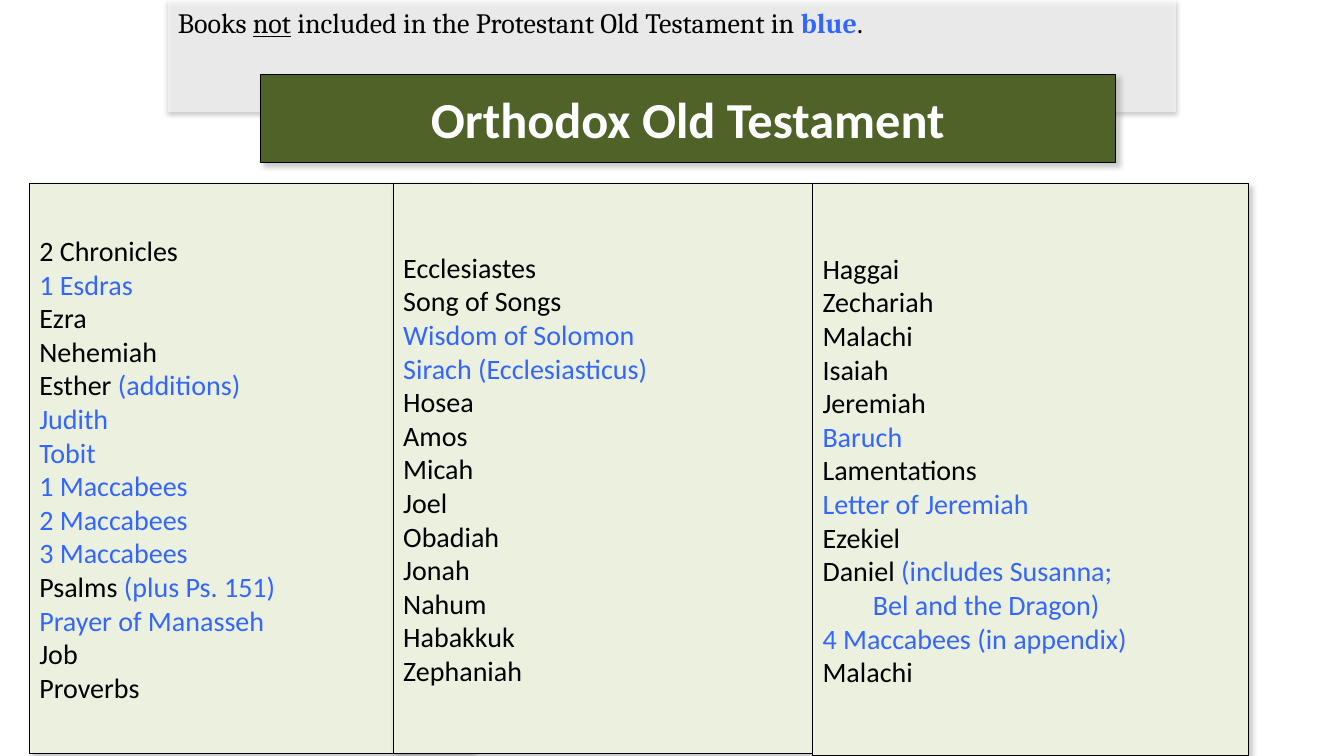
from dataclasses import dataclass

from lxml.etree import SubElement
from pptx import Presentation
from pptx.dml.color import RGBColor
from pptx.enum.shapes import MSO_SHAPE
from pptx.enum.text import MSO_ANCHOR, MSO_AUTO_SIZE, PP_ALIGN
from pptx.oxml.ns import qn
from pptx.util import Inches, Pt


@dataclass(frozen=True)
class Theme:
    ink: str = "000000"
    blue: str = "3366FF"
    white: str = "FFFFFF"
    olive: str = "4F6228"
    pale: str = "EBF1DE"
    heading_font: str = "Calibri"
    note_font: str = "Cambria"
    heading_size: int = 36
    text_size: int = 20
    border: float = 0.75
    tab: float = 0.5
    columns: int = 40
    rows: int = 30
    box_shadow: tuple = ("808080", 43, 4, 3, 45)
    band_shadow: tuple = ("000000", 35, 3.1, 1.8, 90)
    band_opacity: int = 59


class BookSlide:
    def __init__(self, deck, theme):
        self.theme = theme
        self.slide = deck.slides.add_slide(deck.slide_layouts[4])
        self.column = deck.slide_width / theme.columns
        self.row = deck.slide_height / theme.rows

    def box(self, x, y, width, height):
        return (round(x * self.column), round(y * self.row),
                round(width * self.column), round(height * self.row))

    def place(self, part, area):
        for side, length in zip(("left", "top", "width", "height"), self.box(*area)):
            setattr(part, side, length)

    def shade(self, part, shadow):
        color, opacity, blur, distance, angle = shadow
        part.shadow.inherit = False
        effects = part._element.spPr.find(qn("a:effectLst"))
        outer = SubElement(effects, qn("a:outerShdw"), blurRad=str(Pt(blur)),
                           dist=str(Pt(distance)), dir=str(angle * 60000),
                           algn="ctr", rotWithShape="0")
        tint = SubElement(outer, qn("a:srgbClr"), val=color)
        SubElement(tint, qn("a:alpha"), val=str(opacity * 1000))

    def paint(self, part, color):
        part.fill.solid()
        part.fill.fore_color.rgb = RGBColor.from_string(color)
        part.line.color.rgb = RGBColor.from_string(self.theme.ink)
        part.line.width = Pt(self.theme.border)
        self.shade(part, self.theme.box_shadow)

    def frame(self, part, **formats):
        for key, value in formats.items():
            setattr(part.text_frame, key, value)

    def add_words(self, paragraph, text, color, **formats):
        for number, line in enumerate(text.split("\n")):
            if number:
                paragraph.add_line_break()
            run = paragraph.add_run()
            run.text = line
            run.font.color.rgb = RGBColor.from_string(color)
            for key, value in formats.items():
                setattr(run.font, key, value)

    def band(self, area):
        band = self.slide.shapes.add_shape(MSO_SHAPE.RECTANGLE, *self.box(*area))
        band.fill.solid()
        band.fill.fore_color.rgb = RGBColor.from_string(self.theme.white)
        tint = band._element.spPr.find(qn("a:solidFill"))[0]
        SubElement(tint, qn("a:alpha"), val=str(self.theme.band_opacity * 1000))
        band.line.fill.background()
        self.shade(band, self.theme.band_shadow)
        self.slide.shapes._spTree.insert(2, band._element)

    def title(self, text, area):
        title = self.slide.shapes.title
        self.place(title, area)
        self.paint(title, self.theme.olive)
        self.frame(title, word_wrap=True, auto_size=MSO_AUTO_SIZE.NONE,
                   vertical_anchor=MSO_ANCHOR.MIDDLE)
        heading = title.text_frame.paragraphs[0]
        heading.alignment = PP_ALIGN.CENTER
        self.add_words(heading, text, self.theme.white, bold=True,
                       name=self.theme.heading_font, size=Pt(self.theme.heading_size))

    def note(self, pieces, area):
        note = self.slide.shapes.add_textbox(*self.box(*area))
        self.frame(note, word_wrap=True, auto_size=MSO_AUTO_SIZE.SHAPE_TO_FIT_TEXT)
        for text, color, formats in pieces:
            self.add_words(note.text_frame.paragraphs[0], text, color,
                           name=self.theme.note_font, size=Pt(self.theme.text_size), **formats)

    def books(self, index, titles, area):
        panel = self.slide.placeholders[index]
        self.place(panel, area)
        self.paint(panel, self.theme.pale)
        self.frame(panel, word_wrap=True, auto_size=MSO_AUTO_SIZE.NONE,
                   vertical_anchor=MSO_ANCHOR.MIDDLE)
        for number, book in enumerate(titles):
            entry = panel.text_frame.add_paragraph() if number else panel.text_frame.paragraphs[0]
            settings = entry._p.get_or_add_pPr()
            for key in ("marL", "indent"):
                settings.set(key, "0")
            SubElement(settings, qn("a:buNone"))
            stops = SubElement(settings, qn("a:tabLst"))
            SubElement(stops, qn("a:tab"), pos=str(Inches(self.theme.tab)), algn="l")
            entry.space_before = Pt(0)
            shared, _, extra = book.partition("|")
            for text, color in ((shared, self.theme.ink), (extra, self.theme.blue)):
                if text:
                    self.add_words(entry, text, color, bold=False,
                                   name=self.theme.heading_font, size=Pt(self.theme.text_size))

    def drop_empty(self):
        for holder in list(self.slide.placeholders):
            if not holder.text_frame.text:
                holder._element.getparent().remove(holder._element)


PANELS = [
    ((0.87, 7.28, 13.17, 22.64), [
        "2 Chronicles", "|1 Esdras", "Ezra", "Nehemiah", "Esther |(additions)",
        "|Judith", "|Tobit", "|1 Maccabees", "|2 Maccabees", "|3 Maccabees",
        "Psalms |(plus Ps. 151)", "|Prayer of Manasseh", "Job", "Proverbs"]),
    ((11.7, 7.28, 13.71, 22.64), [
        "Ecclesiastes", "Song of Songs", "|Wisdom of Solomon",
        "|Sirach (Ecclesiasticus)", "Hosea", "Amos", "Micah", "Joel", "Obadiah",
        "Jonah", "Nahum", "Habakkuk", "Zephaniah"]),
    ((24.18, 7.28, 12.99, 22.72), [
        "Haggai", "Zechariah", "Malachi", "Isaiah", "Jeremiah", "|Baruch",
        "Lamentations", "|Letter of Jeremiah", "Ezekiel",
        "Daniel |(includes Susanna;\n\tBel and the Dragon)",
        "|4 Maccabees (in appendix)", "Malachi"]),
]


def main():
    deck = Presentation()
    deck.slide_width, deck.slide_height = Inches(13.33), Inches(7.5)
    theme = Theme()
    canon = BookSlide(deck, theme)
    canon.band((5, 0, 30, 4.44))
    canon.title("Orthodox Old Testament", (7.74, 2.96, 25.47, 3.48))
    canon.note([
        ("Books ", theme.ink, {}),
        ("not", theme.ink, {"underline": True}),
        (" included in the Protestant Old Testament in ", theme.ink, {}),
        ("blue", theme.blue, {"bold": True}),
        (".", theme.ink, {}),
    ], (5, 0.04, 23.82, 1.76))
    for index, (area, titles) in enumerate(PANELS, start=1):
        canon.books(index, titles, area)
    canon.drop_empty()
    deck.save("out.pptx")


if __name__ == "__main__":
    main()
